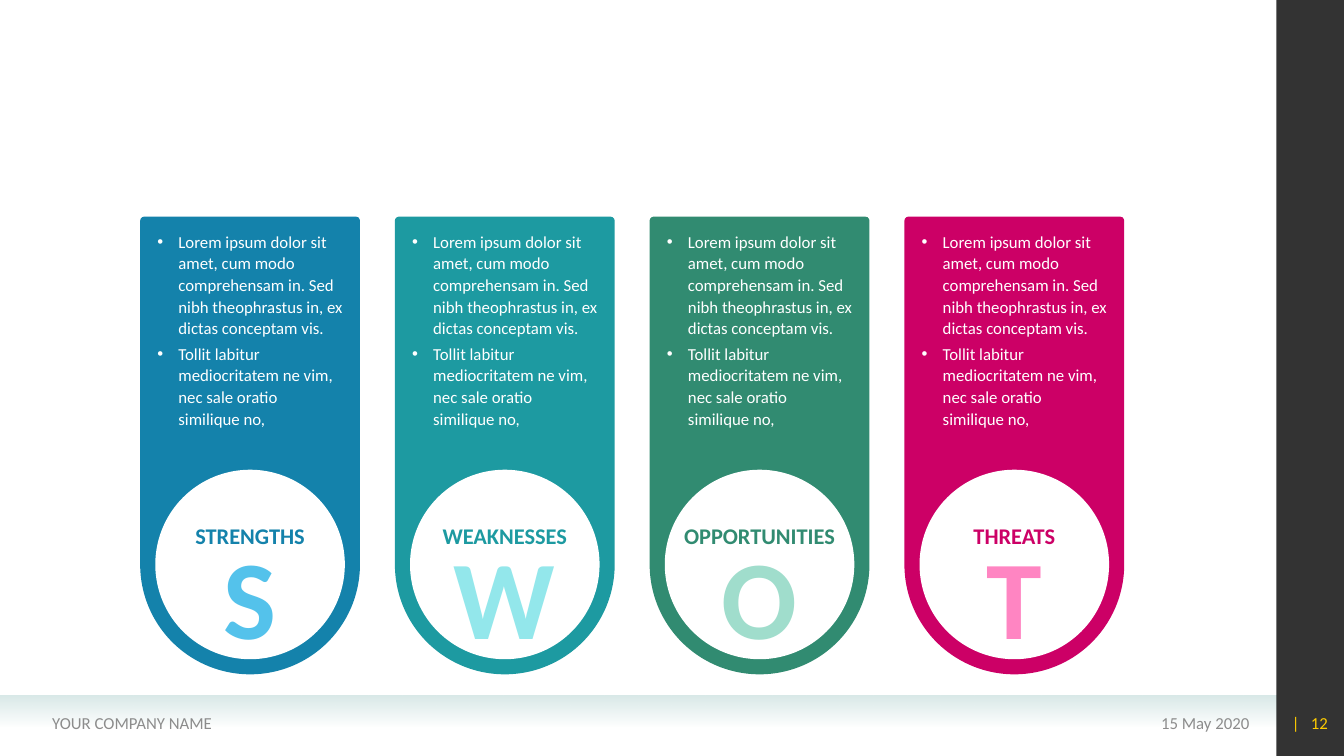
from dataclasses import dataclass

from lxml.etree import SubElement
from pptx import Presentation
from pptx.dml.color import RGBColor
from pptx.enum.shapes import MSO_SHAPE
from pptx.enum.text import MSO_ANCHOR, MSO_AUTO_SIZE, PP_ALIGN
from pptx.oxml.ns import qn
from pptx.util import Inches, Pt


@dataclass(frozen=True)
class Theme:
    """Colours, font and type sizes of the slide."""

    font: str = "Calibri"
    white: str = "FFFFFF"
    band: str = "D9E9E8"
    sidebar: str = "000000"
    footer: str = "8C8C8C"
    page_number: str = "FFCC00"
    body_size: int = 12
    heading_size: int = 16
    letter_size: int = 80


@dataclass(frozen=True)
class Quadrant:
    """One SWOT column: its heading and its two colours."""

    heading: str
    colour: str
    tint: str


THEME = Theme()
QUADRANTS = [
    Quadrant("STRENGTHS", "1482AB", "54C2EB"),
    Quadrant("WEAKNESSES", "1D9AA1", "93E7EB"),
    Quadrant("OPPORTUNITIES", "318B71", "A0DDCC"),
    Quadrant("THREATS", "CC0066", "FF85C2"),
]
POINTS = [
    "Lorem ipsum dolor sit amet, cum modo comprehensam in. "
    "Sed nibh theophrastus in, ex dictas conceptam vis.",
    "Tollit labitur mediocritatem ne vim, nec sale oratio similique no,",
]


def style_font(paragraph, size, colour, bold=False):
    """Set the typeface, size, weight and colour of a paragraph."""
    font = paragraph.font
    font.name, font.size, font.bold = THEME.font, Pt(size), bold
    font.color.rgb = RGBColor.from_string(colour)


def set_alpha(colour_parent, percent):
    """Give the colour inside a fill or gradient stop an opacity."""
    colour = next(colour_parent.iter(qn("a:srgbClr")))
    SubElement(colour, qn("a:alpha"), val=str(percent * 1000))


def add_block(slide, kind, left, top, width, height, colour):
    """Add a preset shape with a solid fill, no outline and no shadow."""
    shape = slide.shapes.add_shape(
        kind, Inches(left), Inches(top), Inches(width), Inches(height)
    )
    shape.shadow.inherit = False
    shape.line.fill.background()
    shape.fill.solid()
    shape.fill.fore_color.rgb = RGBColor.from_string(colour)
    return shape


def add_label(slide, text, left, top, width, height, size, colour,
              align=PP_ALIGN.CENTER, bold=False, wrap=False):
    """Add a single vertically centred line of text."""
    label = slide.shapes.add_textbox(
        Inches(left), Inches(top), Inches(width), Inches(height)
    )
    frame = label.text_frame
    frame.word_wrap = wrap
    frame.vertical_anchor = MSO_ANCHOR.MIDDLE
    paragraph = frame.paragraphs[0]
    paragraph.text = text
    paragraph.alignment = align
    style_font(paragraph, size, colour, bold)


def add_frame(slide, width, height):
    """Draw the footer band, the dark sidebar and the footer texts."""
    sidebar_width, footer_top, footer_height = 0.67, 6.97, 0.4
    sidebar_left = width - sidebar_width
    band = add_block(slide, MSO_SHAPE.RECTANGLE, 0, 6.9, sidebar_left, 0.31, THEME.band)
    band.fill.gradient()
    band.fill.gradient_angle = 270
    for stop, position in zip(band.fill.gradient_stops, (0, 1)):
        stop.position = position
        stop.color.rgb = RGBColor.from_string(THEME.band)
    set_alpha(list(band.element.iter(qn("a:gs")))[-1], 0)

    sidebar = add_block(
        slide, MSO_SHAPE.RECTANGLE, sidebar_left, 0, sidebar_width, height, THEME.sidebar
    )
    set_alpha(sidebar.element.spPr, 80)

    for text, left, label_width, colour, align in (
        ("15 May 2020", 9.1, 3.39, THEME.footer, PP_ALIGN.RIGHT),
        ("YOUR COMPANY NAME", 0.42, 4.9, THEME.footer, PP_ALIGN.LEFT),
        ("|   12", 12.6, 0.67, THEME.page_number, PP_ALIGN.RIGHT),
    ):
        add_label(slide, text, left, footer_top, label_width, footer_height,
                  THEME.body_size, colour, align, wrap=True)


def fill_points(placeholder, left, top, width, height):
    """Place a body placeholder on top and fill it with the bullet points."""
    placeholder.left, placeholder.top = Inches(left), Inches(top)
    placeholder.width, placeholder.height = Inches(width), Inches(height)
    placeholder.element.getparent().append(placeholder.element)
    frame = placeholder.text_frame
    frame.word_wrap = True
    frame.auto_size = MSO_AUTO_SIZE.NONE
    frame.vertical_anchor = MSO_ANCHOR.TOP
    frame.text = "\n".join(POINTS)
    for paragraph in frame.paragraphs:
        paragraph.alignment = PP_ALIGN.LEFT
        paragraph.line_spacing = Pt(15.5)
        paragraph.space_before = Pt(2.4)
        properties = paragraph._p.get_or_add_pPr()
        properties.set("marL", str(Inches(0.21)))
        properties.set("indent", str(-Inches(0.21)))
        SubElement(properties, qn("a:buFont"), typeface="Arial")
        SubElement(properties, qn("a:buChar"), char="•")
        style_font(paragraph, THEME.body_size, THEME.white)


def add_column(slide, quadrant, placeholder, left, top, width, height):
    """Draw one SWOT column with its points, disc, heading and letter."""
    margin = 0.15
    disc = width - 2 * margin
    disc_left, disc_top = left + margin, top + height - margin - disc
    panel = add_block(
        slide, MSO_SHAPE.ROUND_2_SAME_RECTANGLE, left, top, width, height, quadrant.colour
    )
    panel.adjustments[0], panel.adjustments[1] = 0.018, 0.5
    add_block(slide, MSO_SHAPE.OVAL, disc_left, disc_top, disc, disc, THEME.white)
    fill_points(placeholder, left + 0.07, top + 0.08, width - 0.14, 2.36)
    add_label(slide, quadrant.heading[0], disc_left, disc_top + 0.51, disc, 1.45,
              THEME.letter_size, quadrant.tint, bold=True)
    add_label(slide, quadrant.heading, disc_left, disc_top + 0.47, disc, 0.37,
              THEME.heading_size, quadrant.colour, bold=True)


def build_swot_slide(presentation):
    """Build the SWOT slide on the layout with four body placeholders."""
    slide = presentation.slides.add_slide(presentation.slide_layouts[4])
    title = slide.shapes.title.element
    bodies = list(slide.placeholders)[1:]
    title.getparent().remove(title)
    add_frame(slide, 13.33, 7.5)
    pitch = 7.58 / 3
    for index, (quadrant, body) in enumerate(zip(QUADRANTS, bodies)):
        add_column(slide, quadrant, body, 1.39 + index * pitch, 2.15, 2.18, 4.54)


def main():
    """Create and save the presentation."""
    presentation = Presentation()
    presentation.slide_width, presentation.slide_height = Inches(13.33), Inches(7.5)
    build_swot_slide(presentation)
    presentation.save("out.pptx")


if __name__ == "__main__":
    main()
